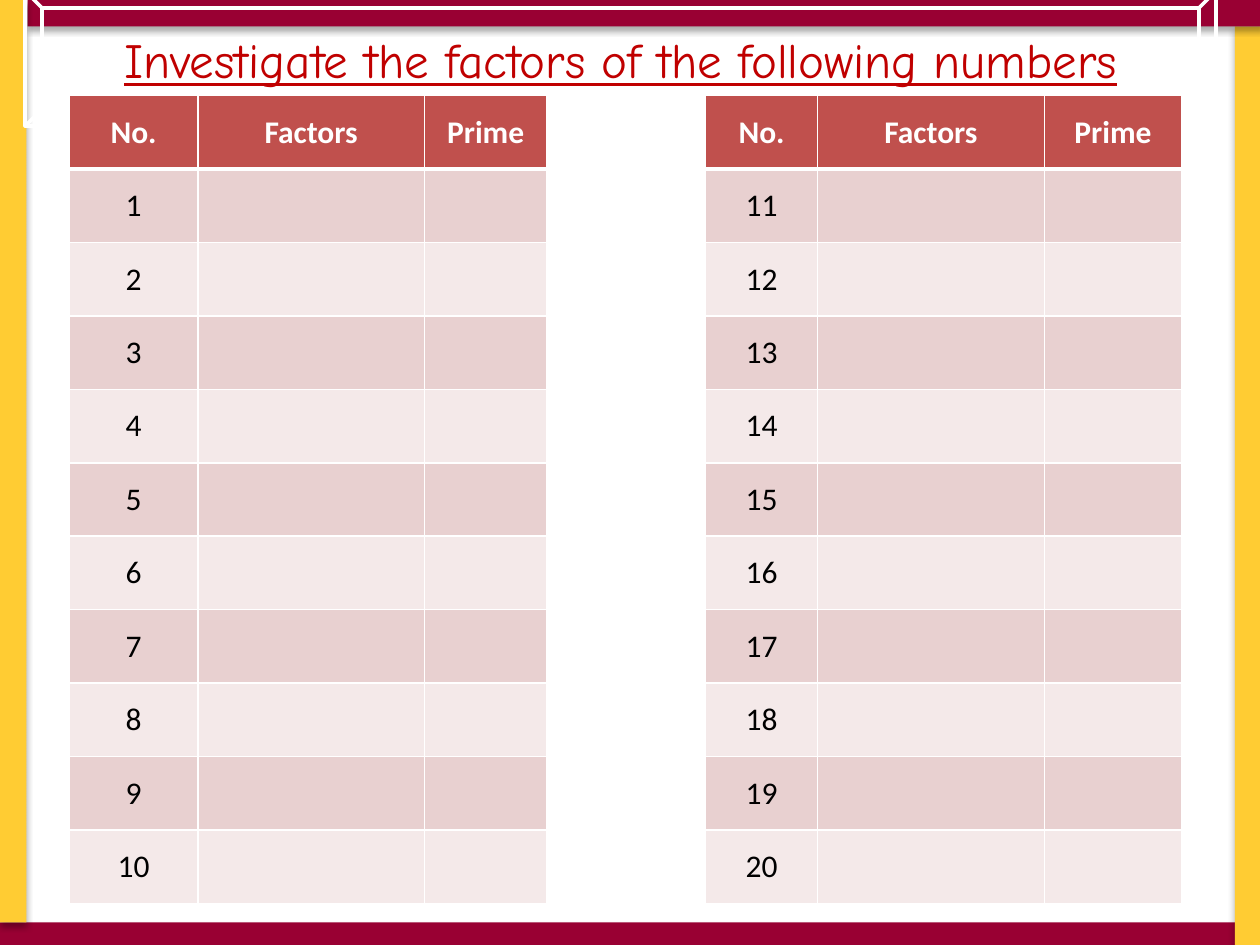
from lxml.etree import SubElement
from pptx import Presentation
from pptx.dml.color import RGBColor
from pptx.enum.shapes import MSO_SHAPE as Shape
from pptx.enum.text import MSO_ANCHOR as Anchor, PP_ALIGN as Align
from pptx.oxml.ns import qn
from pptx.util import Inches, Pt

MAROON, GOLD, WHITE = "990033", "FFCC33", "FFFFFF"
HEADER, BANDS = "C0504D", ("F4E9E9", "E8D0D0")
HEADINGS = ("No.", "Factors", "Prime")
COLUMN_WIDTHS = (1.02, 1.8, 0.97, 1.26, 0.89, 1.8, 1.09)
GAP_COLUMN = 3
NUMBERS_PER_SIDE = 10


def rgb(value):
    return RGBColor.from_string(value)


def inches(box):
    return [Inches(length) for length in box]


def add_node(parent, tag, **attributes):
    return SubElement(parent, qn(tag), {k: str(v) for k, v in attributes.items()})


def write(frame, text, color, **formats):
    paragraph = frame.paragraphs[0]
    paragraph.alignment = Align.CENTER
    run = paragraph.add_run()
    run.text = text
    run.font.color.rgb = rgb(color)
    for name, value in formats.items():
        setattr(run.font, name, value)


def add_border_bar(slide, box, color, rotation):
    bar = slide.shapes.add_shape(Shape.RECTANGLE, *inches(box))
    bar.rotation = rotation
    bar.fill.solid()
    bar.fill.fore_color.rgb = rgb(color)
    bar.line.fill.background()
    # Soft shadow that falls downwards whatever the rotation
    effects = add_node(bar._element.spPr, "a:effectLst")
    shadow = add_node(effects, "a:outerShdw", blurRad=Pt(3.5), dist=Pt(2.2),
                      dir=90 * 60000, rotWithShape=0)
    shade = add_node(shadow, "a:srgbClr", val="000000")
    add_node(shade, "a:alpha", val=32000)


def add_border(slide, box):
    left, top, width, height = box
    thick, length = 0.21, 7.32
    middle = (length - thick) / 2  # offset of a bar turned about its centre
    bars = (
        ((left, top + length, width, thick), MAROON, 0),
        ((left + 9.8 - middle, top + 0.21 + middle, length, thick), GOLD, 90),
        ((left + 0.22, top, 9.8, thick), MAROON, 0),
        ((left - middle, top + middle, length, thick), GOLD, 90),
    )
    for bar in bars:
        add_border_bar(slide, *bar)


def add_title(slide, box):
    title = slide.shapes.add_shape(Shape.BEVEL, *inches(box))
    title.shadow.inherit = False
    title.fill.background()
    title.line.color.rgb = rgb(WHITE)
    title.line.width = Pt(2)
    title.text_frame.word_wrap = True
    title.text_frame.vertical_anchor = Anchor.MIDDLE
    write(title.text_frame, "Investigate the factors of the following numbers",
          "C00000", name="Comic Neue", size=Pt(28), underline=True)


def draw_cell_borders(cell, bottom_width):
    properties = cell._tc.get_or_add_tcPr()
    widths = {"a:lnL": 1, "a:lnR": 1, "a:lnT": 1, "a:lnB": bottom_width}
    for tag, width in widths.items():
        line = add_node(properties, tag, w=Pt(width))
        add_node(add_node(line, "a:solidFill"), "a:srgbClr", val=WHITE)


def style_cell(cell, row, column):
    draw_cell_borders(cell, 3 if row == 0 else 1)
    if column == GAP_COLUMN:
        cell.fill.background()
        return
    cell.fill.solid()
    cell.fill.fore_color.rgb = rgb(BANDS[row % 2] if row else HEADER)
    cell.vertical_anchor = Anchor.MIDDLE
    side, position = divmod(column, GAP_COLUMN + 1)
    font = {"name": "Calibri", "size": Pt(18), "bold": row == 0}
    if row == 0:
        write(cell.text_frame, HEADINGS[position], WHITE, **font)
    elif position == 0:
        write(cell.text_frame, str(row + side * NUMBERS_PER_SIDE), "000000", **font)


def add_factor_table(slide, box):
    rows = NUMBERS_PER_SIDE + 1
    table = slide.shapes.add_table(rows, len(COLUMN_WIDTHS), *inches(box)).table
    table.first_row = table.horz_banding = False
    for column, width in zip(table.columns, COLUMN_WIDTHS):
        column.width = Inches(width)
    for row in range(rows):
        for column in range(len(COLUMN_WIDTHS)):
            style_cell(table.cell(row, column), row, column)


def main():
    deck = Presentation()
    deck.slide_width, deck.slide_height = Inches(10), Inches(7.5)
    slide = deck.slides.add_slide(deck.slide_layouts[6])
    add_border(slide, (0, 0, 10, 7.5))
    add_title(slide, (0.2, -0.07, 9.45, 1.07))
    add_factor_table(slide, (0.55, 0.76, 8.83, 6.41))
    deck.save("out.pptx")


if __name__ == "__main__":
    main()
